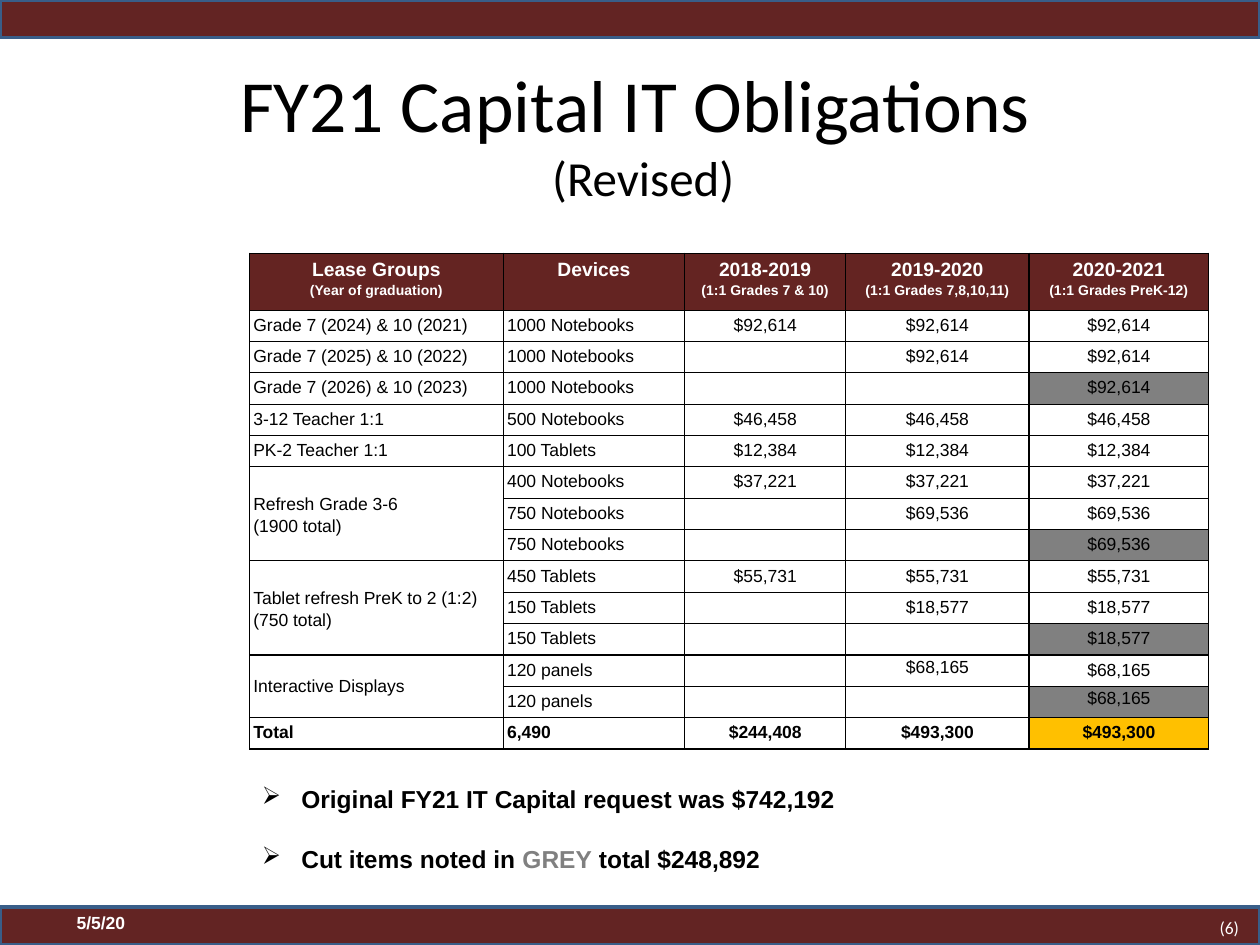
from dataclasses import dataclass

from lxml import etree
from pptx import Presentation
from pptx import util as u
from pptx.dml import color as dml
from pptx.enum import shapes, text
from pptx.oxml import ns

MAROON, HEADER, BLUE = "632423", "642422", "395E89"
BLACK, WHITE, GREY, GOLD = "000000", "FFFFFF", "808080", "FFC000"
WIDTH, HEIGHT, BAR = 720, 540, 21.6
LEFT, CENTER = text.PP_ALIGN.LEFT, text.PP_ALIGN.CENTER
COLUMN_WIDTHS = [145, 103.6, 92.2, 104.6, 102.8]
HEADER_HEIGHT, ROW_HEIGHT = 32.5, 17.94


@dataclass
class DeviceRow:
    devices: str
    amounts: list[str]
    cut: bool = False
    amount_spacing: tuple[float, float] = (1.15, 1.15)  # 2019-2020, 2020-2021


@dataclass
class LeaseGroup:
    title: str
    rows: list[DeviceRow]
    spacing: float = 1.15


HEADINGS = [
    ("Lease Groups", "(Year of graduation)"),
    ("Devices", ""),
    ("2018-2019", "(1:1 Grades 7 & 10)"),
    ("2019-2020", "(1:1 Grades 7,8,10,11)"),
    ("2020-2021", "(1:1 Grades PreK-12)"),
]
GROUPS = [
    LeaseGroup("Grade 7 (2024) & 10 (2021)", [DeviceRow("1000 Notebooks", ["$92,614"] * 3)]),
    LeaseGroup("Grade 7 (2025) & 10 (2022)", [DeviceRow("1000 Notebooks", ["", "$92,614", "$92,614"])]),
    LeaseGroup("Grade 7 (2026) & 10 (2023)", [DeviceRow("1000 Notebooks", ["", "", "$92,614"], cut=True)]),
    LeaseGroup("3-12 Teacher 1:1", [DeviceRow("500 Notebooks", ["$46,458"] * 3)]),
    LeaseGroup("PK-2 Teacher 1:1", [DeviceRow("100 Tablets", ["$12,384"] * 3)]),
    LeaseGroup("Refresh Grade 3-6\n(1900 total)", [
        DeviceRow("400 Notebooks", ["$37,221"] * 3),
        DeviceRow("750 Notebooks", ["", "$69,536", "$69,536"]),
        DeviceRow("750 Notebooks", ["", "", "$69,536"], cut=True),
    ]),
    LeaseGroup("Tablet refresh PreK to 2 (1:2)\n(750 total)", [
        DeviceRow("450 Tablets", ["$55,731"] * 3),
        DeviceRow("150 Tablets", ["", "$18,577", "$18,577"]),
        DeviceRow("150 Tablets", ["", "", "$18,577"], cut=True),
    ]),
    LeaseGroup("Interactive Displays", [
        DeviceRow("120 panels", ["", "$68,165", "$68,165"], amount_spacing=(1.0, 1.15)),
        DeviceRow("120 panels", ["", "", "$68,165"], cut=True, amount_spacing=(1.15, 1.0)),
    ], spacing=1.0),
]
TOTALS = ["Total", "6,490", "$244,408", "$493,300", "$493,300"]


def rgb(value: str) -> dml.RGBColor:
    return dml.RGBColor.from_string(value)


def add_text(paragraph, content: str, *, size: float = 10, font: str = "Arial",
             color: str = BLACK, bold: bool = False) -> None:
    """Append formatted text, turning newlines into line breaks."""
    for index, line in enumerate(content.split("\n")):
        if index:
            paragraph.add_line_break()
        if line:
            run = paragraph.add_run()
            run.text = line
            run.font.size = u.Pt(size)
            run.font.name = font
            run.font.bold = bold
            run.font.color.rgb = rgb(color)


def add_box(slide, left: float, top: float, width: float, height: float, *,
            anchor=text.MSO_ANCHOR.TOP, inset_y: float = 3.6):
    frame = slide.shapes.add_textbox(*map(u.Pt, (left, top, width, height))).text_frame
    frame.word_wrap = True
    frame.vertical_anchor = anchor
    frame.margin_left = frame.margin_right = u.Pt(7.2)
    frame.margin_top = frame.margin_bottom = u.Pt(inset_y)
    return frame


def add_bar(slide, top: float) -> None:
    bar = slide.shapes.add_shape(shapes.MSO_SHAPE.RECTANGLE, 0, u.Pt(top), u.Pt(WIDTH), u.Pt(BAR))
    bar.shadow.inherit = False
    bar.fill.solid()
    bar.fill.fore_color.rgb = rgb(MAROON)
    bar.line.color.rgb = rgb(BLUE)
    bar.line.width = u.Pt(2)


def style_cell(cell, fill: str | None = None) -> None:
    """Set margins, black borders, fill and the size of an empty line."""
    cell.margin_left = cell.margin_right = u.Pt(2.2)
    cell.margin_top = cell.margin_bottom = u.Pt(1.4)
    properties = cell._tc.get_or_add_tcPr()
    for side in ("lnL", "lnR", "lnT", "lnB"):
        border = etree.SubElement(properties, ns.qn(f"a:{side}"), w=str(u.Pt(0.75)))
        solid = etree.SubElement(border, ns.qn("a:solidFill"))
        etree.SubElement(solid, ns.qn("a:srgbClr"), val=BLACK)
    if fill:
        cell.fill.solid()
        cell.fill.fore_color.rgb = rgb(fill)
    else:
        cell.fill.background()
    cell.text_frame.paragraphs[0]._p.get_or_add_endParaRPr().set("sz", "1000")


def write_cell(cell, content: str, *, align=LEFT, spacing: float = 1.15,
               new_paragraph: bool = False, **text_format) -> None:
    if not content:
        return
    frame = cell.text_frame
    paragraph = frame.add_paragraph() if new_paragraph else frame.paragraphs[0]
    paragraph.alignment = align
    paragraph.line_spacing = spacing
    add_text(paragraph, content, **text_format)


def add_lease_table(slide) -> None:
    row_count = 2 + sum(len(group.rows) for group in GROUPS)
    table = slide.shapes.add_table(
        row_count, len(COLUMN_WIDTHS), u.Pt(142.6), u.Pt(144.7), u.Pt(sum(COLUMN_WIDTHS)),
        u.Pt(HEADER_HEIGHT + (row_count - 1) * ROW_HEIGHT)).table
    table.first_row = table.horz_banding = False
    for column, width in zip(table.columns, COLUMN_WIDTHS):
        column.width = u.Pt(width)
    for index, row in enumerate(table.rows):
        row.height = u.Pt(ROW_HEIGHT if index else HEADER_HEIGHT)

    for column, (heading, note) in enumerate(HEADINGS):
        cell = table.cell(0, column)
        style_cell(cell, HEADER)
        write_cell(cell, heading, align=CENTER, size=11, color=WHITE, bold=True)
        write_cell(cell, note, align=CENTER, size=8, color=WHITE, bold=True, new_paragraph=True)

    row_index = 1
    for group in GROUPS:
        first = table.cell(row_index, 0)
        for device in group.rows:
            fills = [None] * 4 + [GREY if device.cut else None]
            for column, fill in enumerate(fills):
                style_cell(table.cell(row_index, column), fill)
            write_cell(table.cell(row_index, 1), device.devices)
            spacings = (1.15, *device.amount_spacing)
            for column, (amount, spacing) in enumerate(zip(device.amounts, spacings), 2):
                write_cell(table.cell(row_index, column), amount, align=CENTER, spacing=spacing)
            row_index += 1
        write_cell(first, group.title, spacing=group.spacing)
        if len(group.rows) > 1:
            first.merge(table.cell(row_index - 1, 0))
            first.vertical_anchor = text.MSO_ANCHOR.MIDDLE

    for column, total in enumerate(TOTALS):
        cell = table.cell(row_index, column)
        style_cell(cell, GOLD if column == 4 else None)
        write_cell(cell, total, align=CENTER if column > 1 else LEFT, bold=True)


def add_bullet(paragraph, parts: list[tuple[str, str]]) -> None:
    properties = paragraph._p.get_or_add_pPr()
    properties.set("marL", str(u.Pt(22.5)))
    properties.set("indent", str(-u.Pt(22.5)))
    bullet_color = etree.SubElement(properties, ns.qn("a:buClr"))
    etree.SubElement(bullet_color, ns.qn("a:srgbClr"), val=BLACK)
    etree.SubElement(properties, ns.qn("a:buChar"), char="➢")
    for content, color in parts:
        add_text(paragraph, content, size=14, color=color, bold=True)


def main() -> None:
    deck = Presentation()
    deck.slide_width, deck.slide_height = u.Pt(WIDTH), u.Pt(HEIGHT)
    slide = deck.slides.add_slide(deck.slide_layouts[6])
    for top in (0, HEIGHT - BAR):
        add_bar(slide, top)

    title = add_box(slide, 36.7, 51.8, 661.7, 48.2, anchor=text.MSO_ANCHOR.MIDDLE).paragraphs[0]
    title.alignment = CENTER
    add_text(title, "FY21 Capital IT Obligations \n", size=42, font="Calibri")
    add_text(title, "(Revised)", size=28, font="Calibri")

    notes = add_box(slide, 142.6, 444.2, 422.6, 58.3)
    add_bullet(notes.paragraphs[0], [("Original FY21 IT Capital request was $742,192", BLACK)])
    cut_note = notes.add_paragraph()
    cut_note.space_before = u.Pt(17.5)
    add_bullet(cut_note, [("Cut items noted in ", BLACK), ("GREY", GREY), (" total $248,892", BLACK)])

    add_lease_table(slide)

    page = add_box(slide, 689.8, 517.7, 36, 23, inset_y=7.2).paragraphs[0]
    add_text(page, "(6)", font="Calibri", color=WHITE)
    date = add_box(slide, 36.7, 517.7, 167.8, 28.8).paragraphs[0]
    add_text(date, "5/5/20", color=WHITE, bold=True)
    deck.save("out.pptx")


if __name__ == "__main__":
    main()
